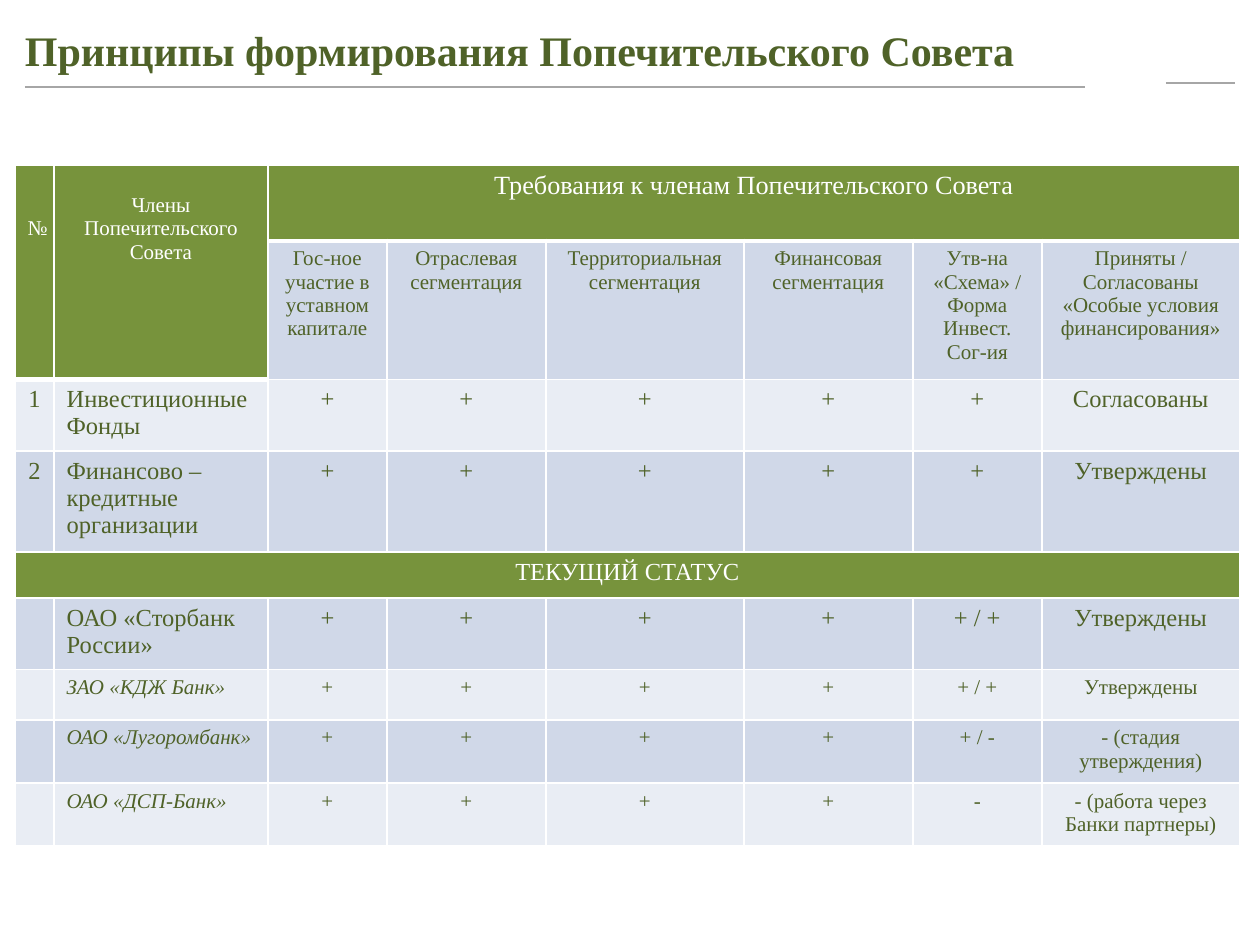
from lxml.etree import SubElement as Sub
from pptx import Presentation
from pptx.dml.color import RGBColor as RGB
from pptx.enum.shapes import MSO_CONNECTOR as Conn
from pptx.enum.text import MSO_ANCHOR as Anchor, PP_ALIGN as Align
from pptx.oxml.ns import qn
from pptx.util import Pt

# Content
TITLE = "Принципы формирования Попечительского Совета"
RULES = [(25, 1085, 87), (1166, 1235, 83)]
LEFT, TOP = 15, 165
COLS = [39, 214, 119, 159, 198, 169, 129, 198]
ROWS = [76, 138, 71, 101, 46, 71, 47, 63, 63]
PLUS = ["+"] * 4
DATA = [
    ["№", "Члены Попечительского Совета",
     "Требования к членам Попечительского Совета"],
    ["", "", "Гос-ное участие в уставном капитале",
     "Отраслевая сегментация", "Территориальная сегментация",
     "Финансовая сегментация", "Утв-на «Схема» / Форма Инвест. Сог-ия",
     "Приняты / Согласованы «Особые условия финансирования»"],
    ["1", "Инвестиционные Фонды", *PLUS, "+", "Согласованы"],
    ["2", "Финансово – кредитные организации", *PLUS, "+", "Утверждены"],
    ["ТЕКУЩИЙ СТАТУС"],
    ["", "ОАО «Сторбанк России»", *PLUS, "+ / +", "Утверждены"],
    ["", "ЗАО «КДЖ Банк»", *PLUS, "+ / +", "Утверждены"],
    ["", "ОАО «Лугоромбанк»", *PLUS, "+ / -", "- (стадия утверждения)"],
    ["", "ОАО «ДСП-Банк»", *PLUS, "-", "- (работа через Банки партнеры)"],
]
SPANS = [(0, 0, 1, 0), (0, 1, 1, 1), (0, 2, 0, 7), (4, 0, 4, 7)]
DROPS = {(0, 0): 52, (0, 1): 29}  # top margins of the tall heads
STATUS = 4

THEME = {
    "font": "Times New Roman", "ink": "4F6228", "white": "FFFFFF",
    "head": "77933C", "dark": "D0D8E8", "light": "E9EDF4", "rule": "A6A6A6",
    "title": 24, "top": 15, "body": 14, "small": 12,
}
PX = 914400 // 126


def px(n):
    return round(n * PX)


def color(name):
    return RGB.from_string(THEME[name])


def write(frame, text, size, ink="ink", align=Align.LEFT, bold=False,
          slant=False):
    para = frame.paragraphs[0]
    para.alignment = align
    run = para.add_run()
    run.text = text
    font = run.font
    font.name, font.size = THEME["font"], Pt(THEME[size])
    font.bold, font.italic = bold, slant
    font.color.rgb = color(ink)


def is_head(row, col):
    return row in (0, STATUS) or (row == 1 and col < 2)


def heavy(row, col):
    """Does this cell end in the thick line below the table head?"""
    return row == 0 or (row == 1 and col < 2)


def edge(cell, row, col):
    props = cell._tc.get_or_add_tcPr()
    wide = {"T": row > 0 and heavy(row - 1, col), "B": heavy(row, col)}
    for side in "LRTB":
        width = Pt(3 if wide.get(side) else 1)
        line = Sub(props, qn(f"a:ln{side}"), w=str(width))
        fill = Sub(line, qn("a:solidFill"))
        Sub(fill, qn("a:srgbClr"), val=THEME["white"])


def band(row, col):
    if is_head(row, col):
        return "head"
    return "light" if row in (2, 6, 8) else "dark"


def text_size(row, col):
    if row == 0 and col == 2:
        return "top"
    return "small" if row < 2 or row > 5 else "body"


def add_title(slide):
    box = slide.shapes.add_textbox(px(25), px(25), px(999), px(50))
    frame = box.text_frame
    frame.word_wrap = True
    frame.vertical_anchor = Anchor.MIDDLE
    frame.margin_left = frame.margin_right = 0
    frame.margin_top = frame.margin_bottom = 0
    write(frame, TITLE, "title", bold=True)


def add_rules(slide):
    for x1, x2, y in RULES:
        line = slide.shapes.add_connector(
            Conn.STRAIGHT, px(x1), px(y), px(x2), px(y))
        line.line.color.rgb = color("rule")
        line.line.width = Pt(1)
        Sub(line._element.spPr, qn("a:effectLst"))


def add_grid(slide):
    grid = slide.shapes.add_table(
        len(ROWS), len(COLS), px(LEFT), px(TOP),
        px(sum(COLS)), px(sum(ROWS))).table
    grid.first_row = grid.horz_banding = False
    for col, width in zip(grid.columns, COLS):
        col.width = px(width)
    for row, height in zip(grid.rows, ROWS):
        row.height = px(height)

    # Cell lines and fills
    for r in range(len(ROWS)):
        for c in range(len(COLS)):
            cell = grid.cell(r, c)
            edge(cell, r, c)
            cell.fill.solid()
            cell.fill.fore_color.rgb = color(band(r, c))
    for r1, c1, r2, c2 in SPANS:
        grid.cell(r1, c1).merge(grid.cell(r2, c2))
    for (r, c), drop in DROPS.items():
        grid.cell(r, c).margin_top = px(drop)

    # Cell text
    for r, texts in enumerate(DATA):
        for c, text in enumerate(texts):
            if not text:
                continue
            name = c == 1 and r > 1
            write(grid.cell(r, c).text_frame, text, text_size(r, c),
                  ink="white" if is_head(r, c) else "ink",
                  align=Align.LEFT if name else Align.CENTER,
                  slant=name and r > 5)


def main():
    deck = Presentation()
    deck.slide_width, deck.slide_height = px(1260), px(945)
    slide = deck.slides.add_slide(deck.slide_layouts[6])
    add_rules(slide)
    add_title(slide)
    add_grid(slide)
    deck.save("out.pptx")


if __name__ == "__main__":
    main()
